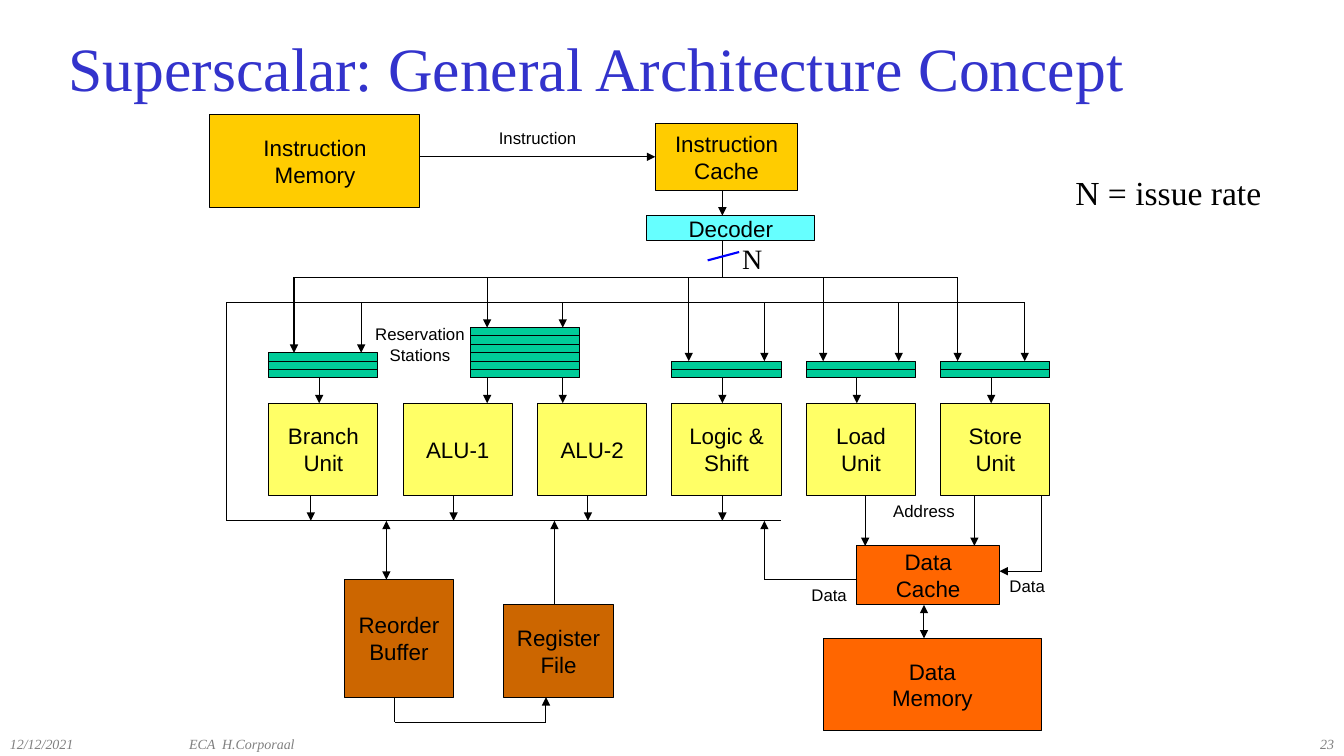
import itertools

import pptx
import pptx.dml.color
import pptx.enum.shapes
import pptx.enum.text
import pptx.oxml.xmlchemy
import pptx.util

Pt = pptx.util.Pt
RGB = pptx.dml.color.RGBColor
ALIGN = pptx.enum.text.PP_ALIGN
ANCHOR = pptx.enum.text.MSO_ANCHOR

BLACK = RGB(0x00, 0x00, 0x00)
GREY = RGB(0x80, 0x80, 0x80)
TITLE_BLUE = RGB(0x33, 0x33, 0xCC)
SLASH_BLUE = RGB(0x00, 0x00, 0xFF)
GOLD = RGB(0xFF, 0xCC, 0x00)
CYAN = RGB(0x66, 0xFF, 0xFF)
YELLOW = RGB(0xFF, 0xFF, 0x66)
GREEN = RGB(0x00, 0xCC, 0x99)
BROWN = RGB(0xCC, 0x66, 0x00)
ORANGE = RGB(0xFF, 0x66, 0x00)

SANS, SERIF = "Arial", "Times New Roman"
UNIT_LEFT, UNIT_STEP, UNIT_WIDTH = 192, 96, 78
UNIT_TOP, UNIT_BOTTOM = 288, 354
STATION_BOTTOM, SLOT_HEIGHT = 270, 6
ISSUE_BUS, OPERAND_BUS, RESULT_BUS = 198, 216, 372


def add_run(paragraph, text, size, font, color, italic=False):
    """Append one formatted run to a paragraph."""
    run = paragraph.add_run()
    run.text = text
    run.font.size = Pt(size)
    run.font.name = font
    run.font.italic = italic
    run.font.color.rgb = color


def add_text(slide, text, place, size, font=SERIF, color=BLACK, align=ALIGN.LEFT,
             anchor=ANCHOR.TOP, italic=False, wrap=True):
    """Add a free-standing piece of text."""
    frame = slide.shapes.add_textbox(*map(Pt, place)).text_frame
    frame.word_wrap = wrap
    frame.vertical_anchor = anchor
    frame.paragraphs[0].alignment = align
    add_run(frame.paragraphs[0], text, size, font, color, italic)


def add_block(slide, place, fill, *lines):
    """Add an outlined block with one centred paragraph per line."""
    block = slide.shapes.add_shape(
        pptx.enum.shapes.MSO_SHAPE.RECTANGLE, *map(Pt, place))
    block.shadow.inherit = False
    block.fill.solid()
    block.fill.fore_color.rgb = fill
    block.line.color.rgb = BLACK
    block.line.width = Pt(0.75)
    frame = block.text_frame
    frame.word_wrap = False
    frame.vertical_anchor = ANCHOR.MIDDLE
    for index, line in enumerate(lines):
        paragraph = frame.add_paragraph() if index else frame.paragraphs[0]
        paragraph.alignment = ALIGN.CENTER
        add_run(paragraph, line, 16, SANS, BLACK)


def add_line(slide, start, end, ends=(), color=BLACK, width=0.75):
    """Add a straight line with triangles at the named ends."""
    line = slide.shapes.add_connector(
        pptx.enum.shapes.MSO_CONNECTOR.STRAIGHT, *map(Pt, (*start, *end)))
    line.line.color.rgb = color
    line.line.width = Pt(width)
    outline = line.line._get_or_add_ln()
    for name in ends:
        tip = pptx.oxml.xmlchemy.OxmlElement(f"a:{name}")
        tip.set("type", "triangle")
        outline.append(tip)
    line._element.spPr.append(pptx.oxml.xmlchemy.OxmlElement("a:effectLst"))


def add_route(slide, *points):
    """Join points by straight lines, with an arrowhead at the last one."""
    legs = list(itertools.pairwise(points))
    for start, end in legs[:-1]:
        add_line(slide, start, end)
    add_line(slide, *legs[-1], ["tailEnd"])


def add_station(slide, left, slots, issue_x, operand_x, exits):
    """Stack reservation slots and draw the arrows into and out of them."""
    top = STATION_BOTTOM - slots * SLOT_HEIGHT
    for slot in range(slots):
        add_block(slide, (left, top + slot * SLOT_HEIGHT, UNIT_WIDTH, SLOT_HEIGHT), GREEN)
    add_route(slide, (issue_x, ISSUE_BUS), (issue_x, top))
    add_route(slide, (operand_x, OPERAND_BUS), (operand_x, top))
    for x in exits:
        add_route(slide, (x, STATION_BOTTOM), (x, UNIT_TOP))


def add_front_end(slide):
    """Draw instruction fetch, decoding and the issue width."""
    add_block(slide, (150, 82, 150, 66), GOLD, "Instruction", "Memory")
    add_block(slide, (468, 88, 102, 48), GOLD, "Instruction", "Cache")
    add_block(slide, (462, 154, 120, 18), CYAN, "Decoder")
    add_route(slide, (300, 112), (468, 112))
    add_route(slide, (516, 136), (516, 154))
    add_line(slide, (516, 172), (516, ISSUE_BUS))
    add_line(slide, (505.5, 186), (528, 180), color=SLASH_BLUE, width=1.5)
    add_text(slide, "N", (523, 169, 29.5, 31.5), 20, wrap=False)
    add_text(slide, "N = issue rate", (761, 119.5, 148.5, 36), 24, wrap=False)


def add_execution(slide):
    """Draw the functional units, their stations and the buses."""
    units = [("Branch", "Unit"), ("ALU-1",), ("ALU-2",),
             ("Logic &", "Shift"), ("Load", "Unit"), ("Store", "Unit")]
    for index, lines in enumerate(units):
        left = UNIT_LEFT + index * UNIT_STEP
        add_block(slide, (left, UNIT_TOP, UNIT_WIDTH, UNIT_BOTTOM - UNIT_TOP), YELLOW, *lines)
    stations = [(192, 3, 210, 258, [228]), (336, 6, 348, 402, [348, 402]),
                (480, 2, 492, 546, [516]), (576, 2, 588, 642, [612]),
                (672, 2, 684, 732, [708])]
    for station in stations:
        add_station(slide, *station)
    add_line(slide, (210, ISSUE_BUS), (684, ISSUE_BUS))
    add_line(slide, (162, OPERAND_BUS), (732, OPERAND_BUS))
    add_line(slide, (162, RESULT_BUS), (162, OPERAND_BUS))
    add_line(slide, (162, RESULT_BUS), (558, RESULT_BUS))
    for x in (222, 324, 420, 516):
        add_route(slide, (x, UNIT_BOTTOM), (x, RESULT_BUS))


def add_back_end(slide):
    """Draw the reorder buffer, register file and data memory."""
    add_block(slide, (246, 414, UNIT_WIDTH, 84), BROWN, "Reorder", "Buffer")
    add_block(slide, (360, 432, UNIT_WIDTH, 66), BROWN, "Register", "File")
    add_block(slide, (612, 390, 102, 42), ORANGE, "Data", "Cache")
    add_block(slide, (588, 456, 156, 66), ORANGE, "Data", "Memory")
    both = ["headEnd", "tailEnd"]
    add_line(slide, (276, 414), (276, RESULT_BUS), both)
    add_line(slide, (660, 432), (660, 456), both)
    add_route(slide, (396, 432), (396, RESULT_BUS))
    add_route(slide, (282, 498), (282, 516), (390, 516), (390, 498))
    add_route(slide, (612, 414), (546, 414), (546, RESULT_BUS))
    add_route(slide, (744, UNIT_BOTTOM), (744, 408), (714, 408))
    for x in (618, 696):
        add_route(slide, (x, UNIT_BOTTOM), (x, 390))


def main():
    """Build and save the slide."""
    deck = pptx.Presentation()
    deck.slide_width, deck.slide_height = Pt(960), Pt(540)
    slide = deck.slides.add_slide(deck.slide_layouts[6])
    add_text(slide, "Superscalar: General Architecture Concept", (42, 18, 896, 60),
             44, color=TITLE_BLUE, anchor=ANCHOR.MIDDLE)
    for text, left, width, align in [("12/12/2021", 0, 128, ALIGN.LEFT),
                                     ("ECA  H.Corporaal", 128, 304, ALIGN.LEFT),
                                     ("23", 760, 200, ALIGN.RIGHT)]:
        add_text(slide, text, (left, 522, width, 18), 10, color=GREY,
                 align=align, italic=True)
    add_front_end(slide)
    add_execution(slide)
    add_back_end(slide)
    for text, left, top, height, align in [
            ("Instruction", 342, 88, 21.6, ALIGN.CENTER),
            ("Reservation Stations", 258, 228, 36, ALIGN.CENTER),
            ("Address", 618, 354, 21.6, ALIGN.CENTER),
            ("Data", 714, 408, 21.6, ALIGN.LEFT),
            ("Data", 528, 414, 21.6, ALIGN.RIGHT)]:
        add_text(slide, text, (left, top, 84, height), 12, SANS, align=align)
    deck.save("out.pptx")


if __name__ == "__main__":
    main()
